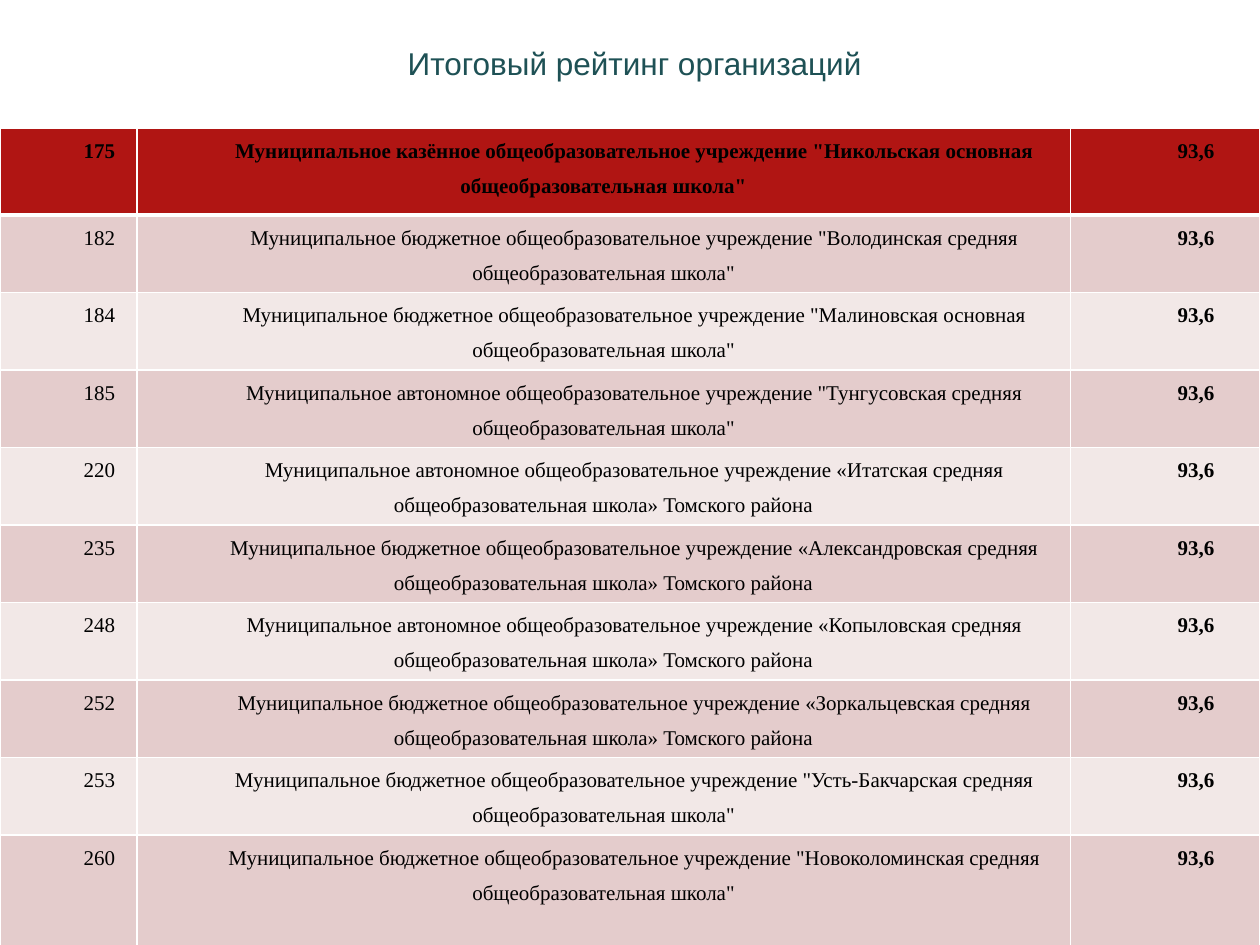
"""Build the slide with the final rating of organisations."""
from lxml import etree
from pptx import Presentation
from pptx import util as u
from pptx.dml.color import RGBColor
from pptx.enum import text
from pptx.oxml import ns

COLORS = {"title": "1E5155", "text": "000000", "head": "B01513",
          "odd": "E4CCCC", "even": "F2E8E7", "line": "FFFFFF"}
COLS = [78.3, 533.3, 108.4]
ROW_HEIGHTS = [49.5] + [44.3] * 8 + [74.2]
SCORE = "93,6"
KINDS = {"к": "казённое", "б": "бюджетное", "а": "автономное"}
SCHOOLS = [
    ("175", "к", '"Никольская основная общеобразовательная школа"'),
    ("182", "б", '"Володинская средняя общеобразовательная школа"'),
    ("184", "б", '"Малиновская основная общеобразовательная школа"'),
    ("185", "а", '"Тунгусовская средняя общеобразовательная школа"'),
    ("220", "а", "«Итатская средняя общеобразовательная школа» Томского района"),
    ("235", "б", "«Александровская средняя общеобразовательная школа» Томского района"),
    ("248", "а", "«Копыловская средняя общеобразовательная школа» Томского района"),
    ("252", "б", "«Зоркальцевская средняя общеобразовательная школа» Томского района"),
    ("253", "б", '"Усть-Бакчарская средняя общеобразовательная школа"'),
    ("260", "б", '"Новоколоминская средняя общеобразовательная школа"'),
]


class Deck:
    def __init__(self):
        self.prs = Presentation()
        self.prs.slide_width, self.prs.slide_height = u.Pt(720), u.Pt(540)
        self.s = self.prs.slides.add_slide(self.prs.slide_layouts[5])

    def font(self, p, name, size, color, bold=False):
        f = p.font
        f.name, f.size, f.bold = name, u.Pt(size), bold
        f.color.rgb = RGBColor.from_string(COLORS[color])

    def title(self, words, x, y, w, h):
        sp = self.s.shapes.title
        sp.left, sp.top, sp.width, sp.height = map(u.Pt, (x, y, w, h))
        tf = sp.text_frame
        tf.text = words
        tf.word_wrap = True
        tf.vertical_anchor = text.MSO_ANCHOR.TOP
        tf.margin_left = u.Pt(12.6)
        p = tf.paragraphs[0]
        p.alignment = text.PP_ALIGN.CENTER
        self.font(p, "Arial", 18, "title")

    def borders(self, cell, widths):
        tcPr = cell._tc.get_or_add_tcPr()
        for i, (side, width) in enumerate(widths.items()):
            ln = etree.Element(ns.qn(f"a:ln{side}"), w=str(u.Pt(width)))
            fill = etree.SubElement(ln, ns.qn("a:solidFill"))
            etree.SubElement(fill, ns.qn("a:srgbClr"), val=COLORS["line"])
            tcPr.insert(i, ln)

    def cell(self, cell, words, fill, bold, widths):
        cell.margin_left = cell.margin_right = u.Pt(5)
        cell.margin_top = cell.margin_bottom = 0
        cell.fill.solid()
        cell.fill.fore_color.rgb = RGBColor.from_string(COLORS[fill])
        self.borders(cell, widths)
        cell.text = words
        p = cell.text_frame.paragraphs[0]
        p.alignment = text.PP_ALIGN.CENTER
        p.line_spacing = 1.5
        pPr = p._p.get_or_add_pPr()
        pPr.set("marL", "0")
        pPr.set("indent", str(u.Pt(35.4)))
        self.font(p, "Times New Roman", 12, "text", bold)

    def table(self, rows, x, y):
        frame = self.s.shapes.add_table(
            len(rows), len(COLS), u.Pt(x), u.Pt(y),
            u.Pt(sum(COLS)), u.Pt(sum(ROW_HEIGHTS)))
        tbl = frame.table
        for col, width in zip(tbl.columns, COLS):
            col.width = u.Pt(width)
        for i, row in enumerate(rows):
            tbl.rows[i].height = u.Pt(ROW_HEIGHTS[i])
            fill = "head" if i == 0 else "odd" if i % 2 else "even"
            widths = {"L": 1, "R": 1, "T": 3 if i == 1 else 1, "B": 3 if i == 0 else 1}
            for j, words in enumerate(row):
                self.cell(tbl.cell(i, j), words, fill, i == 0 or j == 2, widths)


def main():
    deck = Deck()
    deck.title("Итоговый рейтинг организаций", 36, 21.6, 648, 90)
    rows = [(number, f"Муниципальное {KINDS[kind]} общеобразовательное учреждение {name}", SCORE)
            for number, kind, name in SCHOOLS]
    deck.table(rows, 0, 73.4)
    deck.prs.save("out.pptx")


if __name__ == "__main__":
    main()
